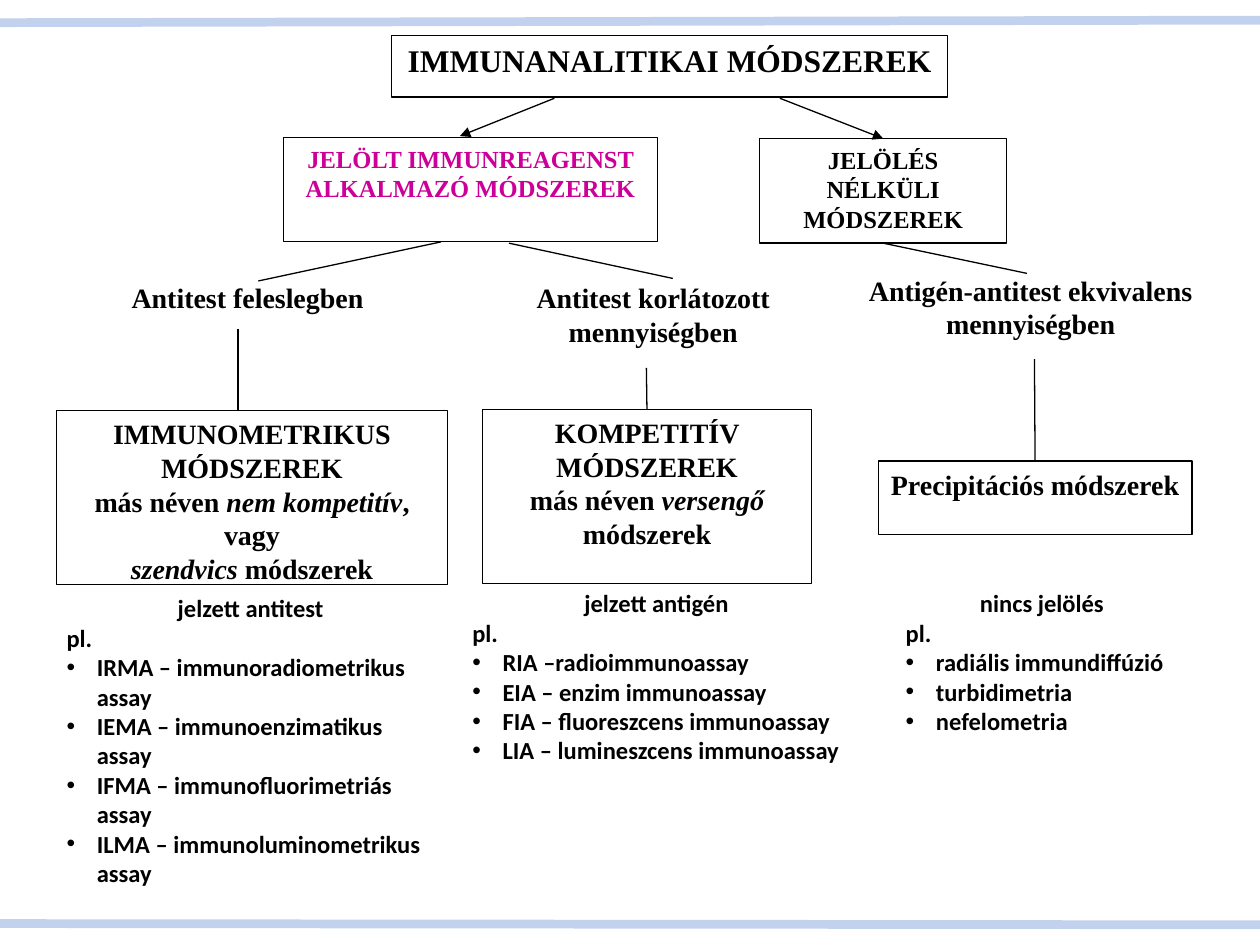
from lxml import etree
from pptx import Presentation
from pptx.dml.color import RGBColor
from pptx.enum.shapes import MSO_CONNECTOR, MSO_SHAPE
from pptx.enum.text import MSO_ANCHOR, PP_ALIGN
from pptx.oxml.ns import qn
from pptx.util import Inches, Pt

BLACK = RGBColor(0x00, 0x00, 0x00)
WHITE = RGBColor(0xFF, 0xFF, 0xFF)
MAGENTA = RGBColor(0xCC, 0x00, 0x99)
PALE_BLUE = RGBColor(0xC2, 0xD1, 0xED)

SERIF = "Times New Roman"
SANS = "Calibri"

WIDTH, HEIGHT = Inches(10), Inches(7.5)
CELL = WIDTH / 100  # the page is a grid of 100 columns and 75 rows
BULLET_INDENT = Inches(0.24)
TOP, BOTTOM = 0, 2  # connection sites of a rectangle


def grid(*cells):
    return [round(cell * CELL) for cell in cells]


def inside(area, left, top, width, height):
    """Move a box given relative to an area to page coordinates."""
    return area[0] + left, area[1] + top, width, height


def add_box(page, box, outlined=True, margin=0.09):
    shape = page.shapes.add_shape(MSO_SHAPE.RECTANGLE, *grid(*box))
    shape.shadow.inherit = False
    shape.fill.solid()
    shape.fill.fore_color.rgb = WHITE
    if outlined:
        shape.line.color.rgb = BLACK
        shape.line.width = Pt(0.75)
    else:
        shape.line.fill.background()
    frame = shape.text_frame
    frame.word_wrap = True
    frame.vertical_anchor = MSO_ANCHOR.TOP
    frame.margin_left = frame.margin_right = Inches(margin)
    frame.margin_top = frame.margin_bottom = Inches(0.05)
    return shape


def add_bullet(para):
    properties = para._p.get_or_add_pPr()
    properties.set("marL", str(BULLET_INDENT))
    properties.set("indent", str(-BULLET_INDENT))
    font = etree.SubElement(properties, qn("a:buFont"))
    font.set("typeface", "Arial")
    etree.SubElement(properties, qn("a:buChar")).set("char", "•")


def write(para, spans, size, font=SERIF, color=BLACK, align=PP_ALIGN.CENTER):
    """Add (text, italic) spans as runs of one bold paragraph."""
    para.alignment = align
    for text, italic in spans:
        span = para.add_run()
        span.text = text
        span.font.name = font
        span.font.size = Pt(size)
        span.font.bold = True
        span.font.italic = italic
        span.font.color.rgb = color


def add_label(page, box, lines, size, color=BLACK, outlined=True):
    shape = add_box(page, box, outlined)
    frame = shape.text_frame
    for index, spans in enumerate(lines):
        para = frame.add_paragraph() if index else frame.paragraphs[0]
        write(para, spans, size, color=color)
    return shape


def add_line(page, start, end, color=BLACK, width=0.75, arrow=False):
    line = page.shapes.add_connector(
        MSO_CONNECTOR.STRAIGHT, *grid(*start, *end))
    line.line.color.rgb = color
    line.line.width = Pt(width)
    if arrow:
        tail = etree.SubElement(line.line._get_or_add_ln(), qn("a:tailEnd"))
        tail.set("type", "triangle")
    etree.SubElement(line._element.spPr, qn("a:effectLst"))
    return line


def page_rules(page):
    add_line(page, (0, 1.8), (100, 1.6), PALE_BLUE, 5)
    add_line(page, (0, 73.3), (100, 73.4), PALE_BLUE, 5)


def example_list(page, box, heading, examples):
    frame = add_box(page, box, outlined=False, margin=0.1).text_frame
    write(frame.paragraphs[0], [(heading, False)], 14, SANS)
    write(frame.add_paragraph(), [("pl.", False)], 14, SANS,
          align=PP_ALIGN.LEFT)
    for example in examples:
        para = frame.add_paragraph()
        add_bullet(para)
        write(para, [(example, False)], 14, SANS, align=PP_ALIGN.LEFT)


def method_column(page, area, parts, stem, joined, caption, method, heading,
                  examples):
    """Stack caption, method box and examples, with a stem (x, top, bottom)."""
    caption_box, method_box, list_box = (inside(area, *part) for part in parts)
    example_list(page, list_box, heading, examples)
    method_shape = add_label(page, method_box, method, 16)
    add_label(page, caption_box, [[(caption, False)]], 16, outlined=False)
    x, top, bottom = stem
    line = add_line(page, (area[0] + x, area[1] + top),
                    (area[0] + x, area[1] + bottom))
    if joined:
        line.end_connect(method_shape, TOP)


def method_tree(page, area):
    """Draw the title, its two groups and the lines that branch from them."""
    def point(x, y):
        return area[0] + x, area[1] + y

    add_label(page, inside(area, 8.6, 0, 44.1, 4.9),
              [[("IMMUNANALITIKAI MÓDSZEREK", False)]], 18)
    add_label(page, inside(area, 0, 8.1, 29.7, 8.3),
              [[("JELÖLT IMMUNREAGENST ALKALMAZÓ MÓDSZEREK", False)]],
              14, MAGENTA)
    unlabelled = add_label(page, inside(area, 37.8, 8.2, 19.6, 8.3),
                           [[("JELÖLÉS NÉLKÜLI MÓDSZEREK", False)]], 14)
    add_line(page, point(21.5, 5), point(14, 8), arrow=True)
    arrow = add_line(page, point(39.4, 5), point(47.6, 8.2), arrow=True)
    arrow.end_connect(unlabelled, TOP)
    add_line(page, point(12.5, 16.4), point(-2, 19.5))
    add_line(page, point(17.9, 16.5), point(30.9, 19.3))
    branch = add_line(page, point(47.6, 16.5), point(59, 18.9))
    branch.begin_connect(unlabelled, BOTTOM)


def main():
    deck = Presentation()
    deck.slide_width, deck.slide_height = WIDTH, HEIGHT
    page = deck.slides.add_slide(deck.slide_layouts[6])

    page_rules(page)
    method_column(
        page, (4.3, 21.8),
        [(0.5, 0, 29.7, 8.3), (0.2, 10.8, 31, 13.8), (0, 24.8, 31.2, 21.6)],
        (14.6, 4.3, 10.7), False, "Antitest feleslegben",
        [[("IMMUNOMETRIKUS MÓDSZEREK", False)],
         [("más néven ", False), ("nem kompetitív", True), (", vagy", False)],
         [("szendvics", True), (" módszerek", False)]],
        "jelzett antitest",
        ["IRMA – immunoradiometrikus assay",
         "IEMA – immunoenzimatikus assay",
         "IFMA – immunofluorimetriás assay",
         "ILMA – immunoluminometrikus assay"])
    method_column(
        page, (36.5, 21.8),
        [(0.5, 0, 29.7, 8.3), (1.8, 10.7, 26.1, 13.8), (0, 24.4, 31.2, 22)],
        (14.8, 7.4, 10.7), True, "Antitest korlátozott mennyiségben",
        [[("KOMPETITÍV MÓDSZEREK", False)],
         [("más néven ", False), ("versengő", True), (" módszerek", False)]],
        "jelzett antigén",
        ["RIA –radioimmunoassay",
         "EIA – enzim immunoassay",
         "FIA – fluoreszcens immunoassay",
         "LIA – lumineszcens immunoassay"])
    method_column(
        page, (67.9, 21.2),
        [(0, 0, 27.8, 8.3), (1.8, 15.4, 24.9, 5.8), (3, 25, 23.6, 15.5)],
        (14.2, 7.3, 15.4), True, "Antigén-antitest ekvivalens mennyiségben",
        [[("Precipitációs módszerek", False)]],
        "nincs jelölés",
        ["radiális immundiffúzió", "turbidimetria", "nefelometria"])
    method_tree(page, (22.5, 2.8))

    deck.save("out.pptx")


if __name__ == "__main__":
    main()
